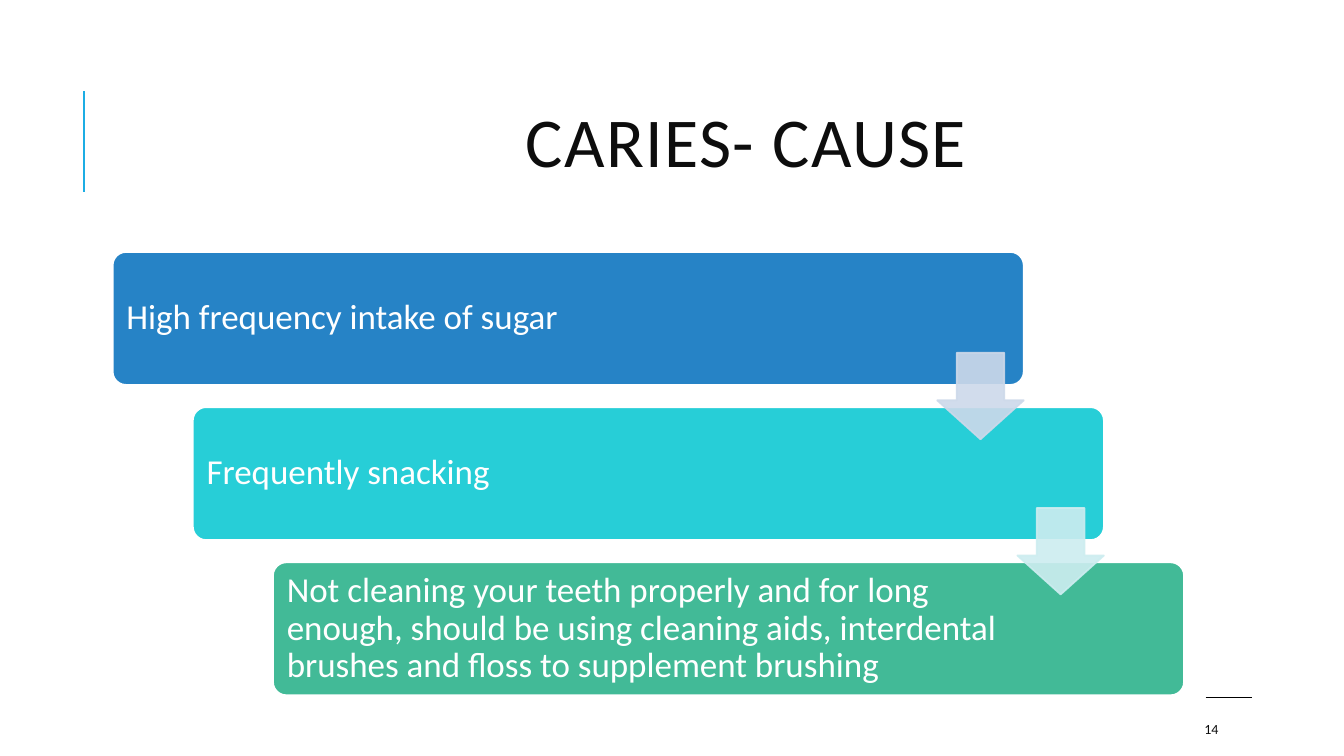
from dataclasses import dataclass

from lxml import etree
from pptx import Presentation
from pptx.dml.color import RGBColor
from pptx.enum.shapes import MSO_CONNECTOR, MSO_SHAPE
from pptx.enum.text import MSO_ANCHOR, MSO_AUTO_SIZE, PP_ALIGN
from pptx.oxml.ns import qn
from pptx.util import Cm, Pt

ROUND = MSO_SHAPE.ROUNDED_RECTANGLE
DOWN = MSO_SHAPE.DOWN_ARROW
STRAIGHT = MSO_CONNECTOR.STRAIGHT
MIDDLE = MSO_ANCHOR.MIDDLE
LEFT = PP_ALIGN.LEFT
FIXED = MSO_AUTO_SIZE.NONE


@dataclass(frozen=True)
class Theme:
    font: str = "Calibri"
    ink: str = "0D0D0D"
    white: str = "FFFFFF"
    black: str = "000000"
    accent: str = "1CADE4"
    bars: tuple = ("2683C6", "27CED7", "42BA97")
    arrows: tuple = ("CDD9EA", "CDEDF0")
    title: int = 50
    body: int = 25
    small: int = 10
    edge: float = 1.25
    rule: float = 1.5


THEME = Theme()
CAUSES = (
    "High frequency intake of sugar",
    "Frequently snacking",
    "Not cleaning your teeth properly and for long enough, should be using "
    "cleaning aids, interdental brushes and floss to supplement brushing",
)
STEP_X, STEP_Y = 2.02, 3.91


def write(shape, text, size, color, space=1.0):
    frame = shape.text_frame
    frame.word_wrap = True
    frame.auto_size = FIXED
    frame.vertical_anchor = MIDDLE
    frame.text = text
    para = frame.paragraphs[0]
    para.alignment = LEFT
    para.line_spacing = space
    para.font.name = THEME.font
    para.font.size = Pt(size)
    para.font.color.rgb = RGBColor.from_string(color)
    return frame


def add_rule(slide, x1, y1, x2, y2, color, width):
    rule = slide.shapes.add_connector(STRAIGHT, Cm(x1), Cm(y1), Cm(x2), Cm(y2))
    rule.line.color.rgb = RGBColor.from_string(color)
    rule.line.width = Pt(width)
    etree.SubElement(rule._element.spPr, qn("a:effectLst"))


def add_form(slide, kind, box, fill, line, adjust):
    form = slide.shapes.add_shape(kind, *map(Cm, box))
    form.shadow.inherit = False
    form.fill.solid()
    form.fill.fore_color.rgb = RGBColor.from_string(fill)
    form.line.color.rgb = RGBColor.from_string(line)
    form.line.width = Pt(THEME.edge)
    for place, value in enumerate(adjust):
        form.adjustments[place] = value
    return form


def add_bar(slide, index, text):
    box = (2.84 + index * STEP_X, 6.35 + index * STEP_Y, 22.96, 3.35)
    bar = add_form(slide, ROUND, box, THEME.bars[index], THEME.white, (0.1,))
    frame = write(bar, text, THEME.body, THEME.white, 0.9)
    frame.margin_left = frame.margin_top = frame.margin_bottom = Cm(0.25)
    frame.margin_right = Cm(4.47)


def add_arrow(slide, index, color):
    box = (23.62 + index * STEP_X, 8.89 + index * STEP_Y, 2.18, 2.18)
    arrow = add_form(slide, DOWN, box, color, color, (0.55, 0.45))
    for tint in arrow._element.spPr.iter(qn("a:srgbClr")):
        etree.SubElement(tint, qn("a:alpha"), val="90000")


def set_title(slide, text):
    title = slide.shapes.title
    title.left, title.top = Cm(2.84), Cm(1.63)
    title.width, title.height = Cm(27), Cm(4.17)
    frame = write(title, text, THEME.title, THEME.ink, 0.8)
    frame.margin_left = Cm(10.41)
    frame.paragraphs[0].runs[0].font._element.set("spc", "100")


def add_page(slide, number):
    page = slide.shapes.add_textbox(Cm(30.1), Cm(17.98), Cm(2.69), Cm(0.76))
    write(page, number, THEME.small, THEME.ink)


def main():
    deck = Presentation()
    deck.slide_width, deck.slide_height = Cm(33.87), Cm(19.05)
    slide = deck.slides.add_slide(deck.slide_layouts[5])
    add_rule(slide, 2.12, 4.83, 2.12, 2.29, THEME.accent, THEME.rule)
    add_rule(slide, 30.38, 17.58, 31.55, 17.58, THEME.black, THEME.edge)
    set_title(slide, "CARIES- CAUSE")
    add_page(slide, "14")
    for index, text in enumerate(CAUSES):
        add_bar(slide, index, text)
    for index, color in enumerate(THEME.arrows):
        add_arrow(slide, index, color)
    deck.save("out.pptx")


if __name__ == "__main__":
    main()
